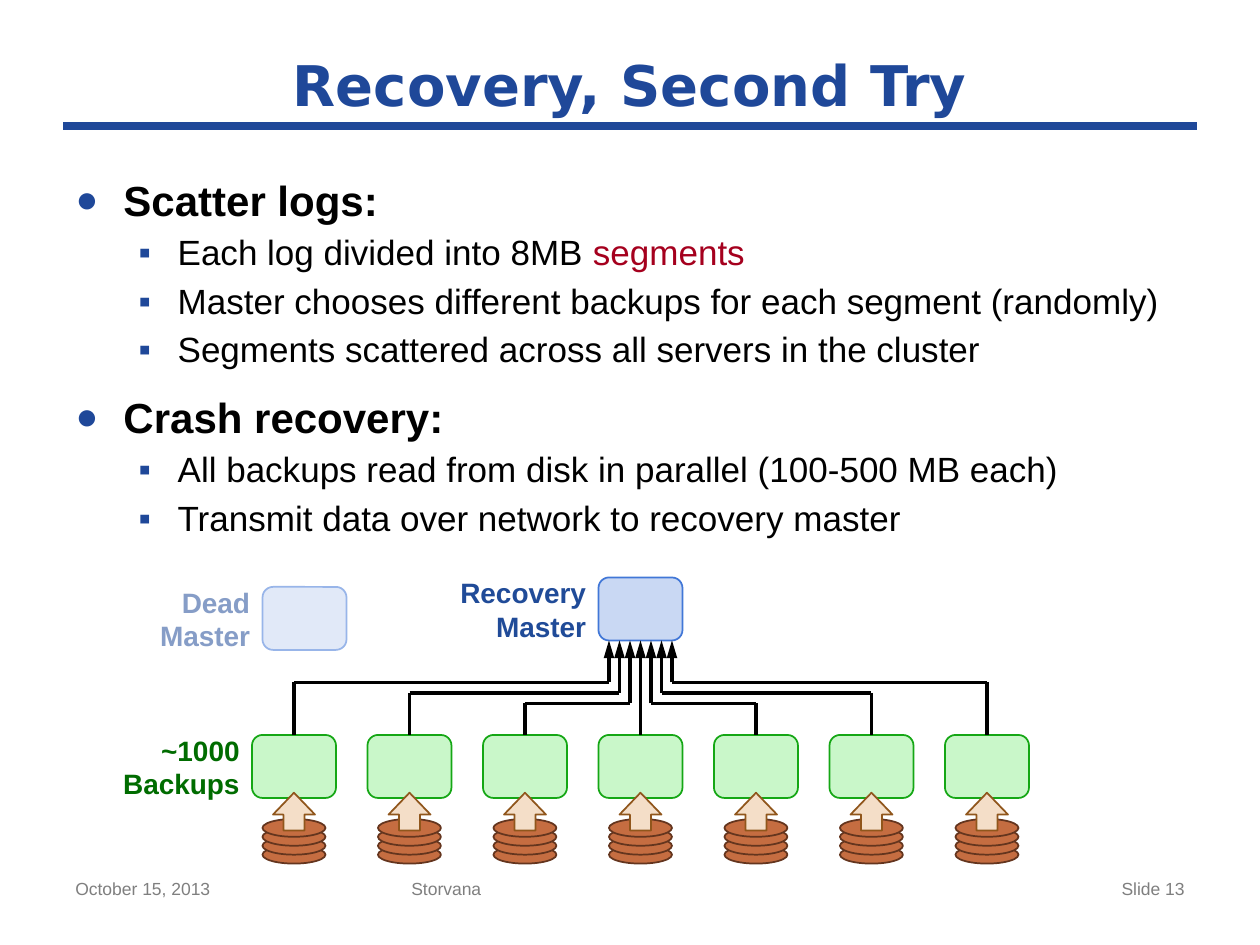
from collections import namedtuple
from dataclasses import dataclass

from lxml import etree
from pptx import Presentation
from pptx.dml.color import RGBColor
from pptx.enum.shapes import MSO_CONNECTOR, MSO_SHAPE
from pptx.enum.text import MSO_ANCHOR, MSO_AUTO_SIZE, PP_ALIGN
from pptx.oxml.ns import qn
from pptx.util import Inches, Pt

STRAIGHT = MSO_CONNECTOR.STRAIGHT
ROUNDED, OVAL = MSO_SHAPE.ROUNDED_RECTANGLE, MSO_SHAPE.OVAL
UP_ARROW, RECTANGLE = MSO_SHAPE.UP_ARROW, MSO_SHAPE.RECTANGLE
LEFT, CENTER, RIGHT = PP_ALIGN.LEFT, PP_ALIGN.CENTER, PP_ALIGN.RIGHT
MIDDLE, NO_FIT = MSO_ANCHOR.MIDDLE, MSO_AUTO_SIZE.NONE

COLUMNS, ROWS = 120, 90
WIDTH, HEIGHT = Inches(10), Inches(7.5)
BACKUPS = 7
Box = namedtuple("Box", "left top width height")


@dataclass(frozen=True)
class Theme:
    heading_font: str = "DejaVu Sans"
    font: str = "Arial"
    title_size: int = 32
    topic_size: int = 24
    point_size: int = 20
    label_size: int = 16
    footer_size: int = 10
    blue: str = "1F4899"
    black: str = "000000"
    accent: str = "A5001E"
    gray: str = "7F7F7F"
    white: str = "FFFFFF"
    master_label: str = "204B98"
    backup_label: str = "006C00"
    master: tuple = ("C9D8F3", "4177D7")
    backup: tuple = ("C9F7C9", "15A715")
    disk: tuple = ("C56D41", "64351E")
    arrow: tuple = ("F4DEC8", "90561C")


THEME = Theme()
TOPICS = [
    ("Scatter logs:", [
        [("Each log divided into 8MB ", THEME.black), ("segments", THEME.accent)],
        [("Master chooses different backups for each segment (randomly)", THEME.black)],
        [("Segments scattered across all servers in the cluster", THEME.black)],
    ]),
    ("Crash recovery:", [
        [("All backups read from disk in parallel (100-500 MB each)", THEME.black)],
        [("Transmit data over network to recovery master", THEME.black)],
    ]),
]


def grid(*cells):
    steps = (WIDTH / COLUMNS, HEIGHT / ROWS)
    return [round(cell * steps[index % 2]) for index, cell in enumerate(cells)]


def assign(target, **values):
    for name, value in values.items():
        setattr(target, name, value)


def style(span, size, color, bold=False, font=THEME.font):
    assign(span.font, size=Pt(size), bold=bold, name=font)
    span.font.color.rgb = RGBColor.from_string(color)


def place(shape, box):
    left, top, width, height = grid(*box)
    assign(shape, left=left, top=top, width=width, height=height)


def draw(shapes, kind, box, colors):
    shape = shapes.add_shape(kind, *grid(*box))
    shape.shadow.inherit = False
    fill, line = colors
    shape.fill.solid()
    shape.fill.fore_color.rgb = RGBColor.from_string(fill)
    if line:
        shape.line.color.rgb = RGBColor.from_string(line)
        shape.line.width = Pt(1)
    else:
        shape.line.fill.background()
    return shape


def connect(page, start, end, color=THEME.black, width=2, arrow=False):
    line = page.shapes.add_connector(STRAIGHT, *grid(*start, *end))
    line.line.color.rgb = RGBColor.from_string(color)
    line.line.width = Pt(width)
    if arrow:
        outline = line.line._get_or_add_ln()
        etree.SubElement(outline, qn("a:tailEnd"), type="triangle", len="lg")
    etree.SubElement(line._element.spPr, qn("a:effectLst"))


def write(page, box, text, size, color, align=LEFT, bold=False):
    frame = page.shapes.add_textbox(*grid(*box)).text_frame
    assign(frame, word_wrap=True, auto_size=NO_FIT)
    para = frame.paragraphs[0]
    para.text = text
    para.alignment = align
    for span in para.runs:
        style(span, size, color, bold)
    for line_break in para._p.findall(qn("a:br")):
        etree.SubElement(line_break, qn("a:rPr"), sz=str(size * 100))


def title(page, box):
    holder = page.shapes.title
    place(holder, box)
    frame = holder.text_frame
    assign(frame, vertical_anchor=MIDDLE, word_wrap=True, auto_size=NO_FIT)
    para = frame.paragraphs[0]
    para.alignment = CENTER
    span = para.add_run()
    span.text = "Recovery, Second Try"
    style(span, THEME.title_size, THEME.blue, True, THEME.heading_font)
    bottom = box.top + box.height
    connect(page, (box.left, bottom), (box.left + box.width, bottom), THEME.blue, 4.5)


def bullet(para, mark, indent, hang, scale):
    props = para._p.get_or_add_pPr()
    props.set("marL", str(Inches(indent)))
    props.set("indent", str(-Inches(hang)))
    color = etree.SubElement(props, qn("a:buClr"))
    etree.SubElement(color, qn("a:srgbClr"), val=THEME.blue)
    etree.SubElement(props, qn("a:buSzPct"), val=str(scale * 1000))
    etree.SubElement(props, qn("a:buFont"), typeface=THEME.font)
    etree.SubElement(props, qn("a:buChar"), char=mark)


def body(page, box):
    holder = page.placeholders[1]
    place(holder, box)
    frame = holder.text_frame
    assign(frame, word_wrap=True, auto_size=NO_FIT)
    entries = []
    for topic, points in TOPICS:
        entries.append((0, [(topic, THEME.black)]))
        entries += [(1, point) for point in points]
    formats = [
        (THEME.topic_size, 12, 1.0, ("●", 0.38, 0.38, 90)),
        (THEME.point_size, 5, 0.95, ("▪", 0.81, 0.31, 100)),
    ]
    for index, (level, spans) in enumerate(entries):
        para = frame.add_paragraph() if index else frame.paragraphs[0]
        size, gap, spacing, mark = formats[level]
        assign(para, level=level, alignment=LEFT, line_spacing=spacing, space_before=Pt(gap))
        bullet(para, *mark)
        for text, color in spans:
            span = para.add_run()
            span.text = text
            style(span, size, color, level == 0)


def server(page, box, colors, label, color):
    draw(page.shapes, ROUNDED, box, colors)
    width = 15
    area = Box(box.left - width, box.top - 0.75, width, 7.7)
    write(page, area, label, THEME.label_size, color, RIGHT, True)


def backup(page, box):
    parts = page.shapes.add_group_shape().shapes
    center, bottom = box.left + box.width / 2, box.top + box.height
    for disk in reversed(range(4)):
        draw(parts, OVAL, Box(center - 3, bottom + 2 + disk * 0.85, 6, 1.7), THEME.disk)
    draw(parts, ROUNDED, box, THEME.backup)
    arrow = draw(parts, UP_ARROW, Box(center - 2, bottom - 0.5, 4, 3.6), THEME.arrow)
    arrow.adjustments[1] = 0.58


def diagram(page, box):
    pitch, size = 11, (8, 6)
    middle = BACKUPS // 2
    row = box.top + 15
    recovery = Box(box.left + middle * pitch, box.top, *size)
    server(page, recovery, THEME.master, "Recovery\vMaster", THEME.master_label)
    write(page, Box(box.left - 15, row - 0.75, 15, 7.7), "~1000\vBackups",
          THEME.label_size, THEME.backup_label, RIGHT, True)
    port = recovery.top + recovery.height
    for index in range(BACKUPS):
        node = Box(box.left + index * pitch, row, *size)
        backup(page, node)
        offset = index - middle
        source = node.left + node.width / 2
        target = recovery.left + recovery.width / 2 + offset
        rail = row - 2 - abs(offset) if offset else row
        if offset:
            connect(page, (source, row), (source, rail))
            connect(page, (source, rail), (target, rail))
        connect(page, (target, rail), (target, port), arrow=True)


def dead_master(page, box):
    server(page, Box(box.left + 11.1, box.top + 1.9, 8, 6), THEME.master,
           "Dead\vMaster", THEME.master_label)
    veil = draw(page.shapes, RECTANGLE, box, (THEME.white, None))
    color = veil.fill._xPr.find(qn("a:solidFill"))[0]
    etree.SubElement(color, qn("a:alpha"), val="46000")


def footer(page, box):
    parts = [(0, 28, "October 15, 2013", LEFT), (32, 45, "Storvana", LEFT),
             (80, 28, "Slide 13", RIGHT)]
    for offset, width, text, align in parts:
        area = Box(box.left + offset, box.top, width, box.height)
        write(page, area, text, THEME.footer_size, THEME.gray, align)


def main():
    deck = Presentation()
    assign(deck, slide_width=WIDTH, slide_height=HEIGHT)
    page = deck.slides.add_slide(deck.slide_layouts[1])
    title(page, Box(6, 4, 108, 8))
    body(page, Box(6, 16, 108, 40))
    diagram(page, Box(24, 55, 74, 28))
    dead_master(page, Box(13.9, 54, 21.1, 10))
    footer(page, Box(6, 83, 108, 5))
    deck.save("out.pptx")


if __name__ == "__main__":
    main()
